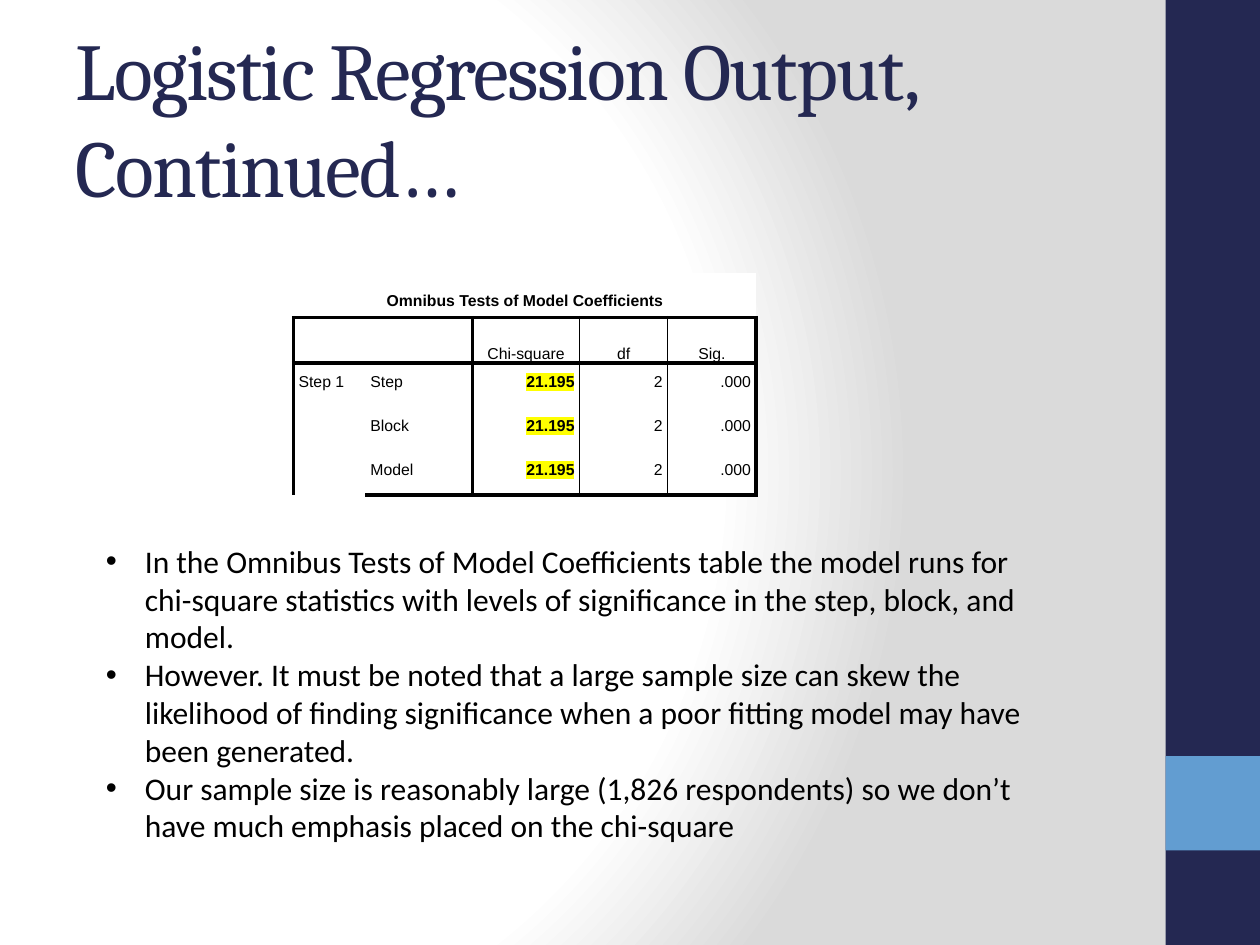
from dataclasses import dataclass

from lxml.etree import SubElement
from pptx import Presentation
from pptx.dml.color import RGBColor as Rgb
from pptx.enum.shapes import MSO_SHAPE as Shape
from pptx.enum.text import MSO_ANCHOR as Anchor, MSO_AUTO_SIZE as AutoSize, PP_ALIGN as Align
from pptx.oxml import parse_xml
from pptx.oxml.ns import nsdecls, qn
from pptx.util import Inches, Pt

COLORS = {
    "navy": "242852",
    "sky": "629DD1",
    "white": "FFFFFF",
    "grey": "DADADA",
    "black": "000000",
    "yellow": "FFFF00",
}
PAGE_WIDTH, PAGE_HEIGHT = Inches(10), Inches(7.5)
THICK, THIN = 2.25, 1


@dataclass(frozen=True)
class Area:
    left: float
    top: float
    width: float
    height: float

    def lengths(self) -> tuple[int, int, int, int]:
        return (
            int(PAGE_WIDTH * self.left / 100),
            int(PAGE_HEIGHT * self.top / 100),
            int(PAGE_WIDTH * self.width / 100),
            int(PAGE_HEIGHT * self.height / 100),
        )


@dataclass(frozen=True)
class Bar:
    area: Area
    color: str


@dataclass(frozen=True)
class Entry:
    row: int
    column: int
    text: str
    align: Align = Align.LEFT
    anchor: Anchor = Anchor.TOP
    bold: bool = False
    highlight: bool = False


BARS = [
    Bar(Area(92.5, 0, 7.5, 100), "navy"),
    Bar(Area(92.5, 80, 7.5, 10), "sky"),
]
TITLE_AREA = Area(5, 4, 83.3, 16.67)
TABLE_AREA = Area(23.3, 28.93, 36.7, 23.4)
BODY_AREA = Area(7.4, 56.67, 75.8, 33.6)

COLUMN_WIDTHS = [0.57, 0.85, 0.85, 0.7, 0.7]
ROW_HEIGHTS = [0.35, 0.36, 0.35, 0.35, 0.35]
VERTICAL_RULES = {0: THICK, 2: THICK, 3: THIN, 4: THIN, 5: THICK}
HORIZONTAL_RULES = {1: THICK, 2: THICK, 5: THICK}
MERGES = [((0, 0), (0, 4)), ((1, 0), (1, 1)), ((2, 0), (4, 0))]

ENTRIES = [
    Entry(0, 0, "Omnibus Tests of Model Coefficients", Align.CENTER, Anchor.MIDDLE, bold=True),
    Entry(2, 0, "Step 1"),
]
ENTRIES += [
    Entry(1, column, text, Align.CENTER, Anchor.BOTTOM)
    for column, text in enumerate(["Chi-square", "df", "Sig."], start=2)
]
for row, name in enumerate(["Step", "Block", "Model"], start=2):
    ENTRIES += [
        Entry(row, 1, name),
        Entry(row, 2, "21.195", Align.RIGHT, bold=True, highlight=True),
        Entry(row, 3, "2", Align.RIGHT),
        Entry(row, 4, ".000", Align.RIGHT),
    ]

POINTS = [
    "In the Omnibus Tests of Model Coefficients table the model runs for chi-square statistics "
    "with levels of significance in the step, block, and model.",
    "However. It must be noted that a large sample size can skew the likelihood of finding "
    "significance when a poor fitting model may have been generated.",
    "Our sample size is reasonably large (1,826 respondents) so we don’t have much emphasis "
    "placed on the chi-square",
]


def rgb(name: str) -> Rgb:
    return Rgb.from_string(COLORS[name])


def add_span(para, text: str, font: str, size: float, color: str, bold: bool = False):
    span = para.add_run()
    span.text = text
    span.font.name = font
    span.font.size = Pt(size)
    span.font.bold = bold
    span.font.color.rgb = rgb(color)
    return span


def place(box, area: Area) -> None:
    box.left, box.top, box.width, box.height = area.lengths()


def paint_background(page) -> None:
    page.background.fill.solid()
    solid = next(page.element.iter(qn("a:solidFill")))
    stops = "".join(
        f'<a:gs pos="{share * 1000}"><a:srgbClr val="{COLORS[color]}"/></a:gs>'
        for share, color in [(0, "white"), (75, "white"), (100, "grey")]
    )
    gradient = parse_xml(
        f'<a:gradFill rotWithShape="1" {nsdecls("a")}><a:gsLst>{stops}</a:gsLst>'
        '<a:path path="circle"><a:fillToRect l="20000" t="50000" r="100000" b="50000"/></a:path>'
        "</a:gradFill>"
    )
    solid.getparent().replace(solid, gradient)


def draw_bar(page, bar: Bar) -> None:
    box = page.shapes.add_shape(Shape.RECTANGLE, *bar.area.lengths())
    box.shadow.inherit = False
    box.fill.solid()
    box.fill.fore_color.rgb = rgb(bar.color)
    box.line.fill.background()


def write_title(box) -> None:
    place(box, TITLE_AREA)
    box.text_frame.vertical_anchor = Anchor.MIDDLE
    box.text_frame.auto_size = AutoSize.NONE
    para = box.text_frame.paragraphs[0]
    para.alignment = Align.LEFT
    span = add_span(para, "Logistic Regression Output, Continued…", "Cambria", 46, "navy")
    span.font._element.set("spc", "-100")


def write_body(box) -> None:
    place(box, BODY_AREA)
    frame = box.text_frame
    frame.auto_size = AutoSize.SHAPE_TO_FIT_TEXT
    for index, text in enumerate(POINTS):
        para = frame.add_paragraph() if index else frame.paragraphs[0]
        para.space_before = Pt(0)
        properties = para._p.get_or_add_pPr()
        properties.set("marL", str(Inches(0.31)))
        properties.set("indent", str(-Inches(0.31)))
        SubElement(properties, qn("a:buFont"), typeface="Arial")
        SubElement(properties, qn("a:buChar"), char="•")
        add_span(para, text, "Calibri", 18, "black")


def add_border(cell, side: str, weight: float) -> None:
    line = SubElement(cell._tc.get_or_add_tcPr(), qn(f"a:ln{side}"), w=str(Pt(weight)))
    if weight:
        fill = SubElement(line, qn("a:solidFill"))
        SubElement(fill, qn("a:srgbClr"), val=COLORS["black"])
    else:
        SubElement(line, qn("a:noFill"))


def format_cell(cell, row: int, column: int) -> None:
    vertical = VERTICAL_RULES if row else {}
    add_border(cell, "L", vertical.get(column, 0))
    add_border(cell, "R", vertical.get(column + 1, 0))
    add_border(cell, "T", HORIZONTAL_RULES.get(row, 0))
    add_border(cell, "B", HORIZONTAL_RULES.get(row + 1, 0))
    cell.fill.solid()
    cell.fill.fore_color.rgb = rgb("white")
    cell.margin_left = cell.margin_right = cell.margin_top = cell.margin_bottom = 0
    para = cell.text_frame.paragraphs[0]
    para.line_spacing = Pt(16)
    for side in ("marL", "marR"):
        para._p.get_or_add_pPr().set(side, str(Inches(0.04)))


def write_entry(table, entry: Entry) -> None:
    cell = table.cell(entry.row, entry.column)
    cell.vertical_anchor = entry.anchor
    para = cell.text_frame.paragraphs[0]
    para.alignment = entry.align
    span = add_span(para, entry.text, "Arial", 9, "black", entry.bold)
    if entry.highlight:
        marker = SubElement(span.font._element, qn("a:highlight"))
        SubElement(marker, qn("a:srgbClr"), val=COLORS["yellow"])
        span.font._element.find(qn("a:latin")).addprevious(marker)


def draw_table(page) -> None:
    table = page.shapes.add_table(
        len(ROW_HEIGHTS), len(COLUMN_WIDTHS), *TABLE_AREA.lengths()
    ).table
    table.first_row = table.horz_banding = False
    for column, width in zip(table.columns, COLUMN_WIDTHS):
        column.width = Inches(width)
    for row, height in zip(table.rows, ROW_HEIGHTS):
        row.height = Inches(height)
    for row in range(len(ROW_HEIGHTS)):
        for column in range(len(COLUMN_WIDTHS)):
            format_cell(table.cell(row, column), row, column)
    for first, last in MERGES:
        table.cell(*first).merge(table.cell(*last))
    for entry in ENTRIES:
        write_entry(table, entry)


def main() -> None:
    deck = Presentation()
    deck.slide_width, deck.slide_height = PAGE_WIDTH, PAGE_HEIGHT
    page = deck.slides.add_slide(deck.slide_layouts[1])
    paint_background(page)
    for bar in BARS:
        draw_bar(page, bar)
    write_title(page.shapes.title)
    draw_table(page)
    write_body(page.placeholders[1])
    deck.save("out.pptx")


if __name__ == "__main__":
    main()
